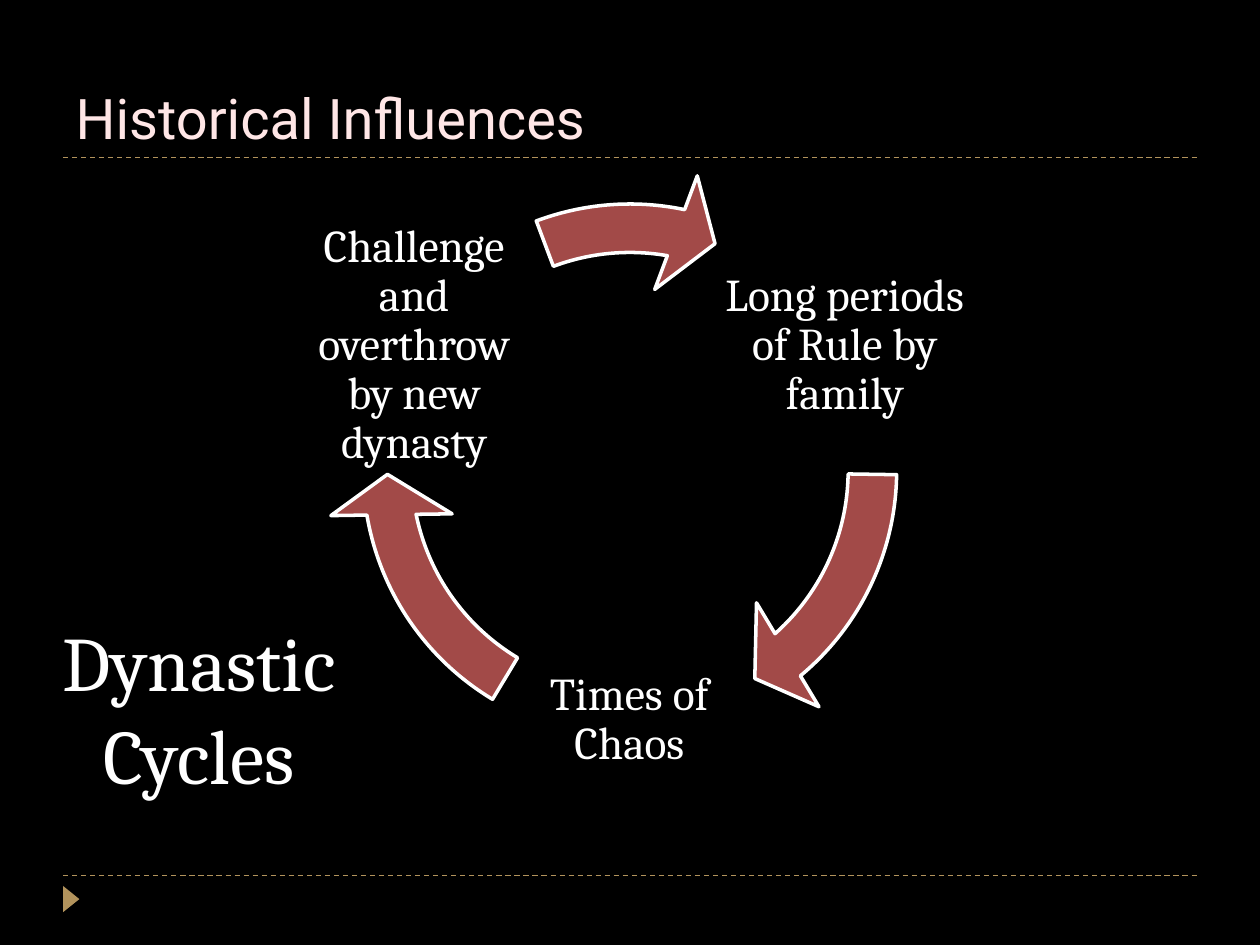
from lxml import etree
from pptx import Presentation, util as u
from pptx.dml.color import RGBColor
from pptx.enum import dml, shapes, text
from pptx.oxml import ns

COLORS = {"background": "000000", "title": "FFE6E6", "text": "FFFFFF",
          "gold": "B2935C", "arrow": "A24A48"}


def color(name):
    return RGBColor.from_string(COLORS[name])


def style_text(tf, size, font, name, align):
    tf.word_wrap = True
    for p in tf.paragraphs:
        p.alignment = align
        for r in p.runs:
            r.font.size = u.Pt(size)
            r.font.name = font
            r.font.color.rgb = color(name)


prs = Presentation()
prs.slide_width, prs.slide_height = u.Cm(25.4), u.Cm(19.05)
s = prs.slides.add_slide(prs.slide_layouts[5])
s.background.fill.solid()
s.background.fill.fore_color.rgb = color("background")

# Dashed rules above the footer and below the title
for y in (17.65, 3.18):
    rule = s.shapes.add_connector(shapes.MSO_CONNECTOR.STRAIGHT,
                                  u.Cm(1.27), u.Cm(y), u.Cm(24.13), u.Cm(y))
    rule.line.color.rgb = color("gold")
    rule.line.width = u.Pt(0.75)
    rule.line.dash_style = dml.MSO_LINE.DASH
    etree.SubElement(rule._element.spPr, ns.qn("a:effectLst"))

# Footer marker
marker = s.shapes.add_shape(shapes.MSO_SHAPE.ISOSCELES_TRIANGLE,
                            u.Cm(1.17), u.Cm(17.96), u.Cm(0.53), u.Cm(0.33))
marker.rotation = 90
marker.shadow.inherit = False
marker.fill.solid()
marker.fill.fore_color.rgb = color("gold")
marker.line.fill.background()

# Title
title = s.shapes.title
title.left, title.top = u.Cm(1.27), u.Cm(0.43)
title.width, title.height = u.Cm(22.86), u.Cm(2.74)
tf = title.text_frame
tf.text = "Historical Influences"
tf.vertical_anchor = text.MSO_ANCHOR.BOTTOM
style_text(tf, 32, "Roboto", "title", text.PP_ALIGN.LEFT)

# Cycle: each stage has its label position and the start and end of its arrow in degrees
stages = [
    ("Long periods of Rule by family", 14.45, 4.39, 0.86, 49.4),
    ("Times of Chaos", 10.11, 11.94, 121, 169.54),
    ("Challenge and overthrow by new dynasty", 5.77, 4.39, 249.45, 280.95),
]
LABEL, RING = u.Cm(5.16), u.Cm(12.22)
DEGREE = 0.6  # one degree in adjustment units

for label, x, y, start, end in stages:
    tf = s.shapes.add_textbox(u.Cm(x), u.Cm(y), LABEL, LABEL).text_frame
    tf.text = label
    tf.vertical_anchor = text.MSO_ANCHOR.MIDDLE
    tf.margin_left = tf.margin_right = tf.margin_top = tf.margin_bottom = u.Cm(0.1)
    tf.paragraphs[0].line_spacing = 0.9
    style_text(tf, 26, "Cambria", "text", text.PP_ALIGN.CENTER)

    arrow = s.shapes.add_shape(shapes.MSO_SHAPE.CIRCULAR_ARROW,
                               u.Cm(6.59), u.Cm(3.38), RING, RING)
    values = (0.08, 9.6 * DEGREE, end * DEGREE, start * DEGREE, 0.1)
    for i, value in enumerate(values):
        arrow.adjustments[i] = value
    arrow.shadow.inherit = False
    arrow.fill.solid()
    arrow.fill.fore_color.rgb = color("arrow")
    arrow.line.color.rgb = color("text")
    arrow.line.width = u.Pt(2)

# Caption
tf = s.shapes.add_textbox(u.Cm(0.84), u.Cm(12.27), u.Cm(6.35), u.Cm(4.01)).text_frame
tf.text = "Dynastic\nCycles"
tf.auto_size = text.MSO_AUTO_SIZE.SHAPE_TO_FIT_TEXT
style_text(tf, 44, "Cambria", "text", text.PP_ALIGN.CENTER)

prs.save("out.pptx")
